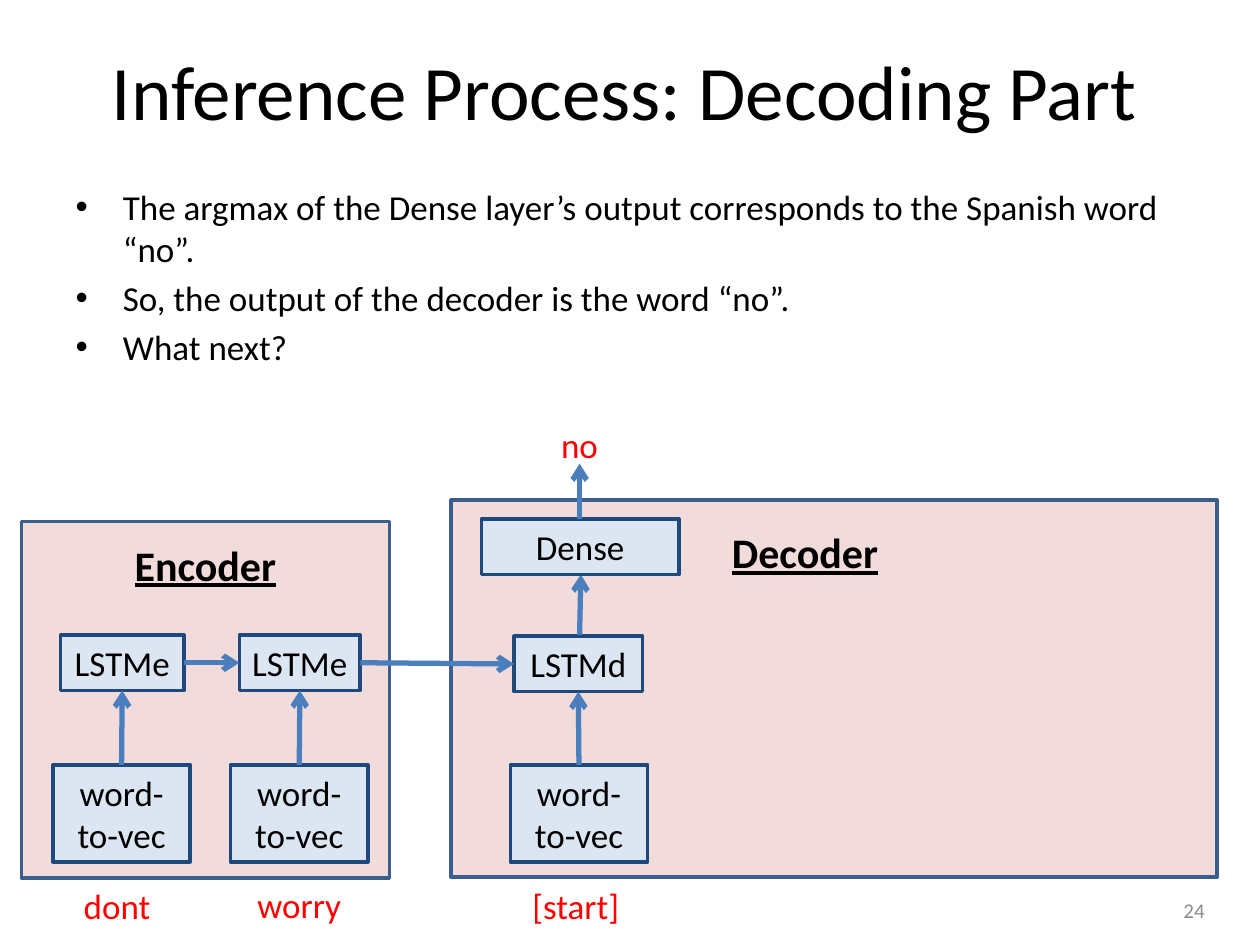
from lxml.etree import SubElement
from pptx import Presentation
from pptx.dml.color import RGBColor
from pptx.enum.shapes import MSO_CONNECTOR, MSO_SHAPE
from pptx.enum.text import MSO_ANCHOR, PP_ALIGN
from pptx.oxml.ns import qn
from pptx.util import Inches, Pt

COLORS = {
    "text": "000000",
    "word": "FF0000",
    "number": "8C8C8C",
    "panel": "F2DCDB",
    "panel_line": "3A5F8C",
    "cell": "DCE6F2",
    "cell_line": "1F497D",
    "arrow": "4B7EBC",
}


class SlideBuilder:
    """Holds the style and the current slide."""

    font = "Calibri"

    def __init__(self, slide):
        self.slide = slide

    def color(self, name):
        return RGBColor.from_string(COLORS[name])

    def place(self, shape, left, top, width, height):
        shape.left, shape.top = Inches(left), Inches(top)
        shape.width, shape.height = Inches(width), Inches(height)

    def fill_text(self, frame, lines, size, color="text", align=None, heading=False):
        frame.word_wrap = True
        for index, line in enumerate(lines):
            para = frame.paragraphs[0] if index == 0 else frame.add_paragraph()
            para.text = line
            para.alignment = align
            for span in para.runs:
                span.font.name = self.font
                span.font.size = Pt(size)
                span.font.color.rgb = self.color(color)
                if heading:
                    span.font.bold = span.font.underline = True

    def placeholder(self, index, area, lines, size, align=None):
        box = self.slide.placeholders[index]
        self.place(box, *area)
        self.fill_text(box.text_frame, lines, size, align=align)
        return box

    def label(self, area, text, size=20, color="word", align=PP_ALIGN.CENTER,
              heading=False, wrap=False):
        box = self.slide.shapes.add_textbox(*map(Inches, area))
        self.fill_text(box.text_frame, [text], size, color, align, heading)
        box.text_frame.word_wrap = wrap
        return box

    def rectangle(self, area, style, text=None):
        box = self.slide.shapes.add_shape(MSO_SHAPE.RECTANGLE, *map(Inches, area))
        box.shadow.inherit = False
        box.fill.solid()
        box.fill.fore_color.rgb = self.color(style)
        box.line.color.rgb = self.color(style + "_line")
        box.line.width = Pt(2)
        if text:
            box.text_frame.vertical_anchor = MSO_ANCHOR.TOP
            self.fill_text(box.text_frame, [text], 20, align=PP_ALIGN.CENTER)

    def arrow(self, start, end):
        connector = self.slide.shapes.add_connector(
            MSO_CONNECTOR.STRAIGHT, *map(Inches, start + end))
        connector.line.color.rgb = self.color("arrow")
        connector.line.width = Pt(3)
        properties = connector.element.spPr
        SubElement(properties.find(qn("a:ln")), qn("a:tailEnd"), type="arrow")
        SubElement(properties, qn("a:effectLst"))


def main():
    deck = Presentation()
    deck.slide_width, deck.slide_height = Inches(10), Inches(7.5)
    page = SlideBuilder(deck.slides.add_slide(deck.slide_layouts[1]))

    # Title, list and slide number
    title = page.placeholder(0, (0.42, 0.17, 9.08, 1.08),
                             ["Inference Process: Decoding Part"], 44, PP_ALIGN.CENTER)
    title.text_frame.vertical_anchor = MSO_ANCHOR.MIDDLE
    page.placeholder(1, (0.5, 1.42, 9, 1.83), [
        "The argmax of the Dense layer’s output corresponds to the Spanish word “no”.",
        "So, the output of the decoder is the word “no”.",
        "What next?",
    ], 20)
    number = page.label((7.33, 7.02, 2.33, 0.4), "24", 12, "number",
                        PP_ALIGN.RIGHT, wrap=True)
    number.text_frame.vertical_anchor = MSO_ANCHOR.MIDDLE

    # Encoder and decoder panels
    page.rectangle((3.58, 3.97, 6.08, 2.99), "panel")
    page.label((5.71, 4.13, 1.7, 0.5), "Decoder", 24, "text", PP_ALIGN.LEFT, True, True)
    page.rectangle((0.17, 4.14, 2.92, 2.83), "panel")
    page.label((0.97, 4.23, 1.34, 0.5), "Encoder", 24, "text", PP_ALIGN.LEFT, True)

    # One column per time step: input word, embedding, recurrent cell
    steps = [
        ("dont", (0.56, 6.97, 0.74, 0.44), 0.42, "LSTMe", (0.48, 5.04, 0.98, 0.44)),
        ("worry", (1.94, 6.96, 0.87, 0.44), 1.83, "LSTMe", (1.9, 5.04, 0.96, 0.44)),
        ("[start]", (4.12, 6.97, 0.9, 0.44), 4.05, "LSTMd", (4.08, 5.05, 1.02, 0.44)),
    ]
    vector_width = 1.09
    for word, word_area, vector_left, cell, cell_area in steps:
        left, top, width, height = cell_area
        page.label(word_area, word)
        page.rectangle((vector_left, 6.07, vector_width, 0.77), "cell", "word-\nto-vec")
        page.rectangle(cell_area, "cell", cell)
        page.arrow((vector_left + vector_width / 2, 6.07),
                   (left + width / 2, top + height))

    # State passed from each cell to the next
    cells = [step[-1] for step in steps]
    for (left, top, width, height), following in zip(cells, cells[1:]):
        page.arrow((left + width, top + height / 2),
                   (following[0], following[1] + following[3] / 2))

    # Dense layer and output word
    page.arrow((4.6, 5.04), (4.61, 4.56))
    page.rectangle((3.82, 4.12, 1.57, 0.44), "cell", "Dense")
    page.arrow((4.6, 4.12), (4.6, 3.68))
    page.label((4.35, 3.31, 0.5, 0.44), "no")

    deck.save("out.pptx")


if __name__ == "__main__":
    main()
